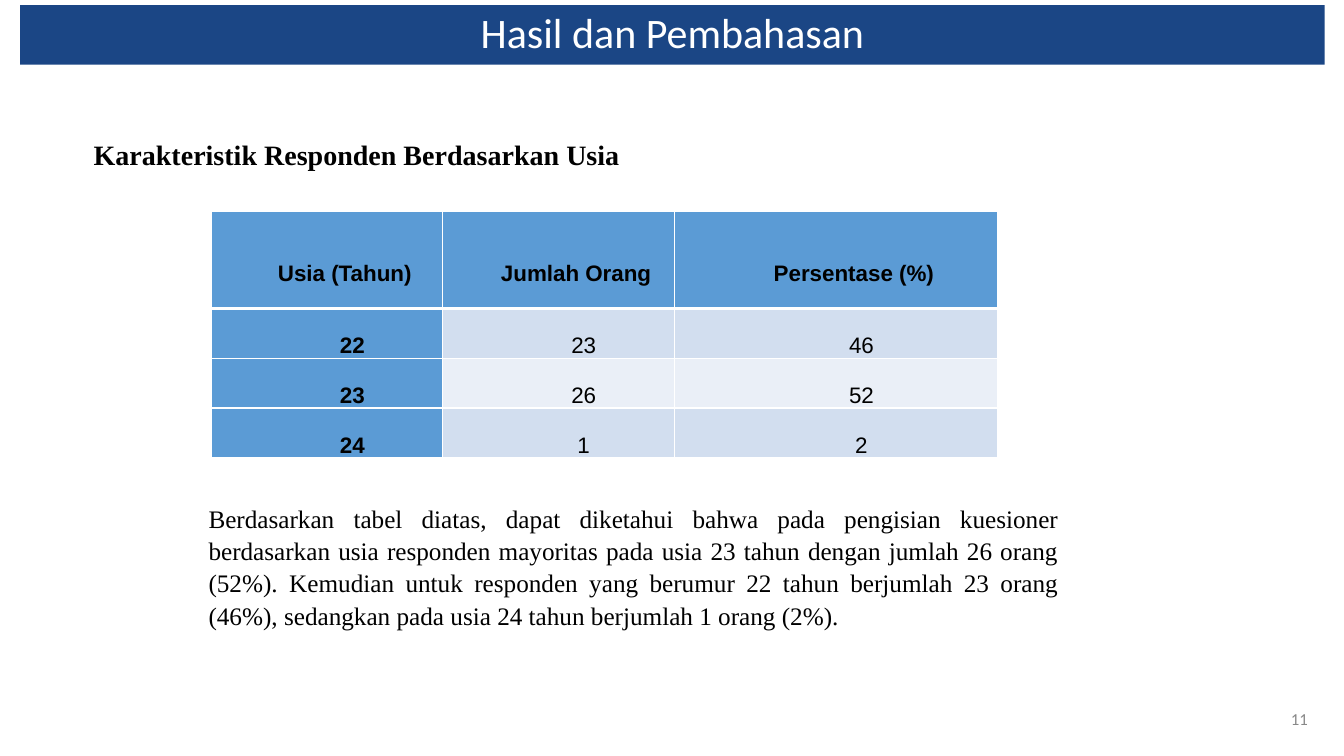
from dataclasses import dataclass

from lxml.etree import SubElement as Sub
from pptx import Presentation
from pptx.dml.color import RGBColor
from pptx.enum.text import MSO_ANCHOR as Anchor, PP_ALIGN as Align
from pptx.oxml.ns import qn
from pptx.util import Emu, Inches, Pt

WIDE, HIGH = Inches(13.33), Inches(7.5)
NAVY, BLUE, PALE, LIGHT = "1B4685", "5B9BD5", "D2DEEF", "EAEFF7"
BLACK, WHITE, GREY = "000000", "FFFFFF", "888888"
SERIF = "Times New Roman"


@dataclass(frozen=True)
class Box:
    """A frame in percent of the slide's width and height."""
    left: float
    top: float
    width: float
    height: float

    def frame(self) -> tuple[Emu, Emu, Emu, Emu]:
        return across(self.left), down(self.top), across(self.width), down(self.height)


@dataclass(frozen=True)
class Label:
    text: str
    box: Box
    style: dict


TITLE = Box(1.5, 0.67, 97.07, 7.87)
TABLE = Box(15.75, 28, 58.5, 31.6)
COLS = (17.18, 17.25, 24.08)
HEAD, BODY = 12.8, 6.27
ROWS = (
    ("Usia (Tahun)", "Jumlah Orang", "Persentase (%)"),
    ("22", "23", "46"),
    ("23", "26", "52"),
    ("24", "1", "2"),
)
PROSE = dict(font=SERIF, align=Align.JUSTIFY, line=1.07, after=8)
LABELS = (
    Label("Karakteristik Responden Berdasarkan Usia",
          Box(6.23, 17.2, 50.04, 5.87), dict(PROSE, size=20, bold=True)),
    Label("Berdasarkan tabel diatas, dapat diketahui bahwa pada pengisian kuesioner "
          "berdasarkan usia responden mayoritas pada usia 23 tahun dengan jumlah 26 orang "
          "(52%). Kemudian untuk responden yang berumur 22 tahun berjumlah 23 orang "
          "(46%), sedangkan pada usia 24 tahun berjumlah 1 orang (2%).",
          Box(14.78, 65.6, 64.74, 18.4), dict(PROSE, size=18)),
    Label("11", Box(93.77, 92.4, 4.28, 5.33),
          dict(size=12, color=GREY, align=Align.RIGHT, anchor=Anchor.MIDDLE)),
)


def across(share: float) -> Emu:
    return Emu(round(WIDE * share / 100))


def down(share: float) -> Emu:
    return Emu(round(HIGH * share / 100))


def paint(fill, color: str) -> None:
    fill.solid()
    fill.fore_color.rgb = RGBColor.from_string(color)


def write(frame, text: str, *, size: float, font: str = "Calibri", color: str = BLACK,
          bold: bool = False, align=Align.CENTER, anchor=Anchor.TOP,
          line: float = 1.0, after: float = 0, indent: float = 0) -> None:
    frame.word_wrap = True
    frame.vertical_anchor = anchor
    frame.text = text
    para = frame.paragraphs[0]
    para.alignment, para.line_spacing = align, line
    para.space_before, para.space_after = Pt(0), Pt(after)
    if indent:
        props = para._p.get_or_add_pPr()
        props.set("marL", str(Inches(indent)))
        props.set("indent", "0")
    face = para.runs[0].font
    face.name, face.size, face.bold = font, Pt(size), bold
    face.color.rgb = RGBColor.from_string(color)


def edge(cell, side: str, width: float) -> None:
    line = Sub(cell._tc.get_or_add_tcPr(), qn(f"a:ln{side}"), w=str(Pt(width)))
    Sub(Sub(line, qn("a:solidFill")), qn("a:srgbClr"), val=WHITE)


def draw_title(slide) -> None:
    title = slide.shapes.title
    title.left, title.top, title.width, title.height = TITLE.frame()
    paint(title.fill, NAVY)
    write(title.text_frame, "Hasil dan Pembahasan", size=30, color=WHITE,
          anchor=Anchor.MIDDLE, line=0.9)


def draw_cell(cell, text: str, row: int, col: int) -> None:
    head = row == 0
    cell.margin_left = cell.margin_right = Inches(0.07)
    cell.margin_top = cell.margin_bottom = 0
    write(cell.text_frame, text, size=16, font="Arial", bold=head or col == 0,
          line=3.0 if head else 2.0, indent=0.35 if head else 0.5,
          after=8 if col == len(COLS) - 1 else 0)
    for side in "LRTB":
        thick = (row, side) in ((0, "B"), (1, "T"))
        edge(cell, side, 3 if thick else 1)
    band = PALE if row % 2 else LIGHT
    paint(cell.fill, BLUE if head or col == 0 else band)


def draw_table(slide) -> None:
    table = slide.shapes.add_table(len(ROWS), len(COLS), *TABLE.frame()).table
    for col, share in zip(table.columns, COLS):
        col.width = across(share)
    for row, texts in enumerate(ROWS):
        table.rows[row].height = down(BODY if row else HEAD)
        for col, text in enumerate(texts):
            draw_cell(table.cell(row, col), text, row, col)


def draw_label(slide, label: Label) -> None:
    box = slide.shapes.add_textbox(*label.box.frame())
    write(box.text_frame, label.text, **label.style)


def main() -> None:
    deck = Presentation()
    deck.slide_width, deck.slide_height = WIDE, HIGH
    slide = deck.slides.add_slide(deck.slide_layouts[5])
    draw_title(slide)
    draw_table(slide)
    for label in LABELS:
        draw_label(slide, label)
    deck.save("out.pptx")


if __name__ == "__main__":
    main()
